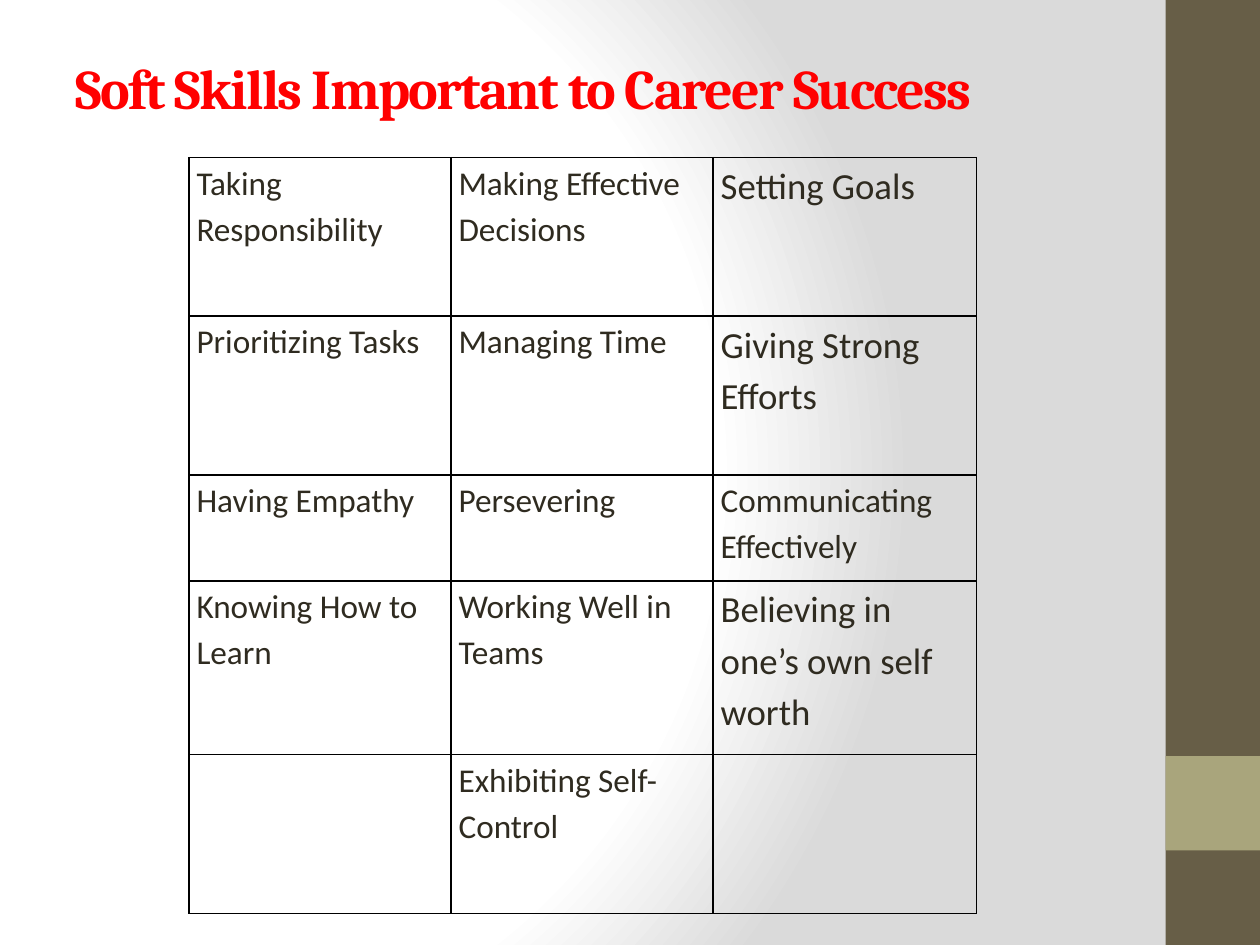
from dataclasses import dataclass

from pptx import Presentation
from pptx import util as u
from pptx.dml import color
from pptx.enum import shapes, text
from pptx.oxml import parse_xml
from pptx.oxml import ns

PX = 9144


@dataclass(frozen=True)
class Theme:
    bar: str = "675E47"
    accent: str = "A9A57C"
    heading: str = "FF0000"
    ink: str = "2F2B20"
    border: str = "000000"
    backdrop: tuple = ((0, "FFFFFF"), (75, "FFFFFF"), (100, "DADADA"))
    heading_font: str = "Cambria"
    body_font: str = "Calibri"
    heading_pt: int = 32
    body_pt: int = 19
    large_pt: int = 21
    line_spacing: float = 1.15
    border_pt: int = 1


@dataclass(frozen=True)
class Box:
    left: int
    top: int
    width: int
    height: int

    def emu(self) -> list:
        return [px(n) for n in (self.left, self.top, self.width, self.height)]


@dataclass(frozen=True)
class Band:
    box: Box
    fill: str


@dataclass(frozen=True)
class Skill:
    label: str
    size: int


def px(length: int) -> u.Emu:
    return u.Emu(length * PX)


THEME = Theme()
SLIDE = Box(0, 0, 1000, 750)
BANDS = (
    Band(Box(925, 0, 75, 750), THEME.bar),
    Band(Box(925, 600, 75, 75), THEME.accent),
)
HEADING = Box(50, 30, 833, 78)
GRID = Box(150, 125, 625, 600)
COLUMNS = (208, 208, 209)
ROWS = (126, 126, 84, 138, 126)
CELL_INSET = 6


def body(label: str) -> Skill:
    return Skill(label, THEME.body_pt)


def large(label: str) -> Skill:
    return Skill(label, THEME.large_pt)


SKILLS = (
    (body("Taking Responsibility"), body("Making Effective Decisions"), large("Setting Goals")),
    (body("Prioritizing Tasks"), body("Managing Time"), large("Giving Strong Efforts")),
    (body("Having Empathy"), body("Persevering"), body("Communicating Effectively")),
    (body("Knowing How to Learn"), body("Working Well in Teams"),
     large("Believing in one’s own self worth")),
    (None, body("Exhibiting Self-Control"), None),
)


def paint_backdrop(slide) -> None:
    slide.background.fill.gradient()
    gradient = slide.element.find(".//" + ns.qn("a:gradFill"))
    stops = "".join(
        f'<a:gs pos="{pos * 1000}"><a:srgbClr val="{rgb}"/></a:gs>'
        for pos, rgb in THEME.backdrop
    )
    gradient.getparent().replace(gradient, parse_xml(
        f'<a:gradFill {ns.nsdecls("a")} rotWithShape="1"><a:gsLst>{stops}</a:gsLst>'
        '<a:path path="circle"><a:fillToRect l="20000" t="50000" r="100000" b="50000"/>'
        "</a:path></a:gradFill>"
    ))


def draw_band(slide, band: Band) -> None:
    bar = slide.shapes.add_shape(shapes.MSO_SHAPE.RECTANGLE, *band.box.emu())
    bar.shadow.inherit = False
    bar.fill.solid()
    bar.fill.fore_color.rgb = color.RGBColor.from_string(band.fill)
    bar.line.fill.background()


def add_run(paragraph, words: str, font: str, size: int, rgb: str, bold: bool = False):
    run = paragraph.add_run()
    run.text = words
    run.font.name = font
    run.font.size = u.Pt(size)
    run.font.bold = bold
    run.font.color.rgb = color.RGBColor.from_string(rgb)
    return run


def draw_heading(slide, words: str) -> None:
    frame = slide.shapes.add_textbox(*HEADING.emu()).text_frame
    frame.word_wrap = True
    frame.vertical_anchor = text.MSO_ANCHOR.MIDDLE
    run = add_run(frame.paragraphs[0], words, THEME.heading_font,
                  THEME.heading_pt, THEME.heading, bold=True)
    run._r.get_or_add_rPr().set("spc", "-100")


def outline_cell(cell) -> None:
    properties = cell._tc.get_or_add_tcPr()
    for order, side in enumerate("LRTB"):
        properties.insert(order, parse_xml(
            f'<a:ln{side} {ns.nsdecls("a")} w="{u.Pt(THEME.border_pt)}"><a:solidFill>'
            f'<a:srgbClr val="{THEME.border}"/></a:solidFill></a:ln{side}>'
        ))


def fill_cell(cell, skill: Skill | None) -> None:
    cell.fill.background()
    outline_cell(cell)
    cell.margin_left = cell.margin_right = px(CELL_INSET)
    cell.margin_top = cell.margin_bottom = 0
    if skill:
        paragraph = cell.text_frame.paragraphs[0]
        paragraph.line_spacing = THEME.line_spacing
        add_run(paragraph, skill.label, THEME.body_font, skill.size, THEME.ink)


def draw_skills(slide) -> None:
    grid = slide.shapes.add_table(len(ROWS), len(COLUMNS), *GRID.emu()).table
    grid.first_row = grid.horz_banding = False
    for column, width in zip(grid.columns, COLUMNS):
        column.width = px(width)
    for row, height, skills in zip(grid.rows, ROWS, SKILLS):
        row.height = px(height)
        for cell, skill in zip(row.cells, skills):
            fill_cell(cell, skill)


def main() -> None:
    deck = Presentation()
    deck.slide_width, deck.slide_height = px(SLIDE.width), px(SLIDE.height)
    slide = deck.slides.add_slide(deck.slide_layouts[6])
    paint_backdrop(slide)
    for band in BANDS:
        draw_band(slide, band)
    draw_heading(slide, "Soft Skills Important to Career Success")
    draw_skills(slide)
    deck.save("out.pptx")


if __name__ == "__main__":
    main()
